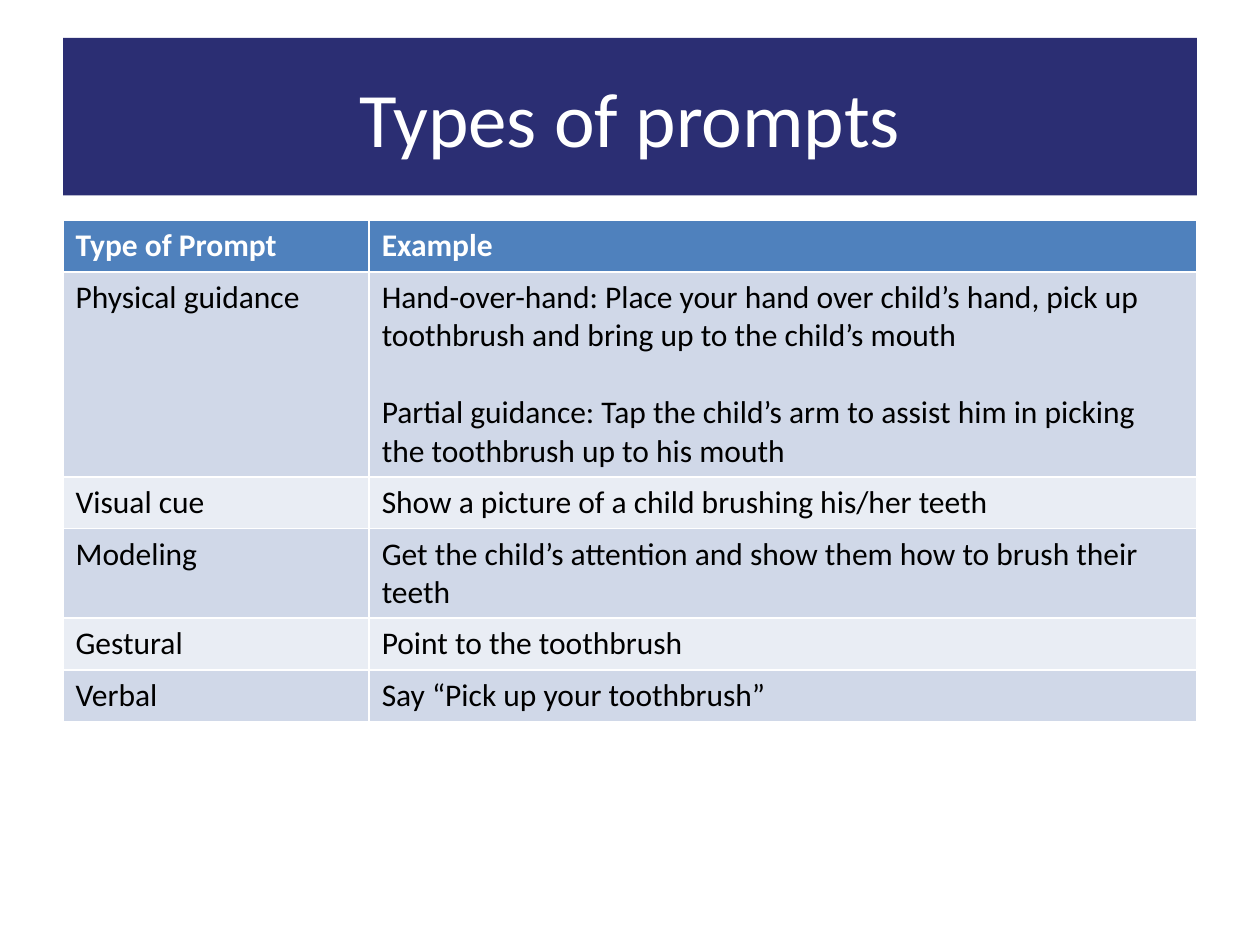
from pptx import Presentation
from pptx.dml.color import RGBColor
from pptx.enum.text import MSO_ANCHOR, PP_ALIGN
from pptx.util import Inches, Pt

CENTER = PP_ALIGN.CENTER
LEFT = PP_ALIGN.LEFT
MIDDLE = MSO_ANCHOR.MIDDLE

NAVY = RGBColor(0x2B, 0x2E, 0x73)
BLUE = RGBColor(0x4F, 0x81, 0xBD)
BAND_DARK = RGBColor(0xD0, 0xD8, 0xE8)
BAND_LIGHT = RGBColor(0xE9, 0xED, 0xF4)
WHITE = RGBColor(0xFF, 0xFF, 0xFF)
BLACK = RGBColor(0x00, 0x00, 0x00)

FONT = "Calibri"
SLIDE_WIDTH = Inches(10)
SLIDE_HEIGHT = Inches(7.5)
MARGIN = SLIDE_WIDTH * 0.05
CONTENT_WIDTH = SLIDE_WIDTH - 2 * MARGIN
ROW_HEIGHT = Inches(0.41)
TYPE_SHARE = 0.27
BLANK_LINE = 22

HEADINGS = ("Type of Prompt", "Example")
PROMPTS = (
    ("Physical guidance",
     "Hand-over-hand: Place your hand over child’s hand, pick up toothbrush "
     "and bring up to the child’s mouth\n"
     "Partial guidance: Tap the child’s arm to assist him in picking the "
     "toothbrush up to his mouth"),
    ("Visual cue", "Show a picture of a child brushing his/her teeth"),
    ("Modeling", "Get the child’s attention and show them how to brush their teeth"),
    ("Gestural", "Point to the toothbrush"),
    ("Verbal", "Say “Pick up your toothbrush”"),
)


def write_text(frame, text, size=18, color=BLACK, bold=False, align=LEFT, gap=0):
    """Fill a text frame with one formatted paragraph per line of text."""
    for index, line in enumerate(text.split("\n")):
        para = frame.add_paragraph() if index else frame.paragraphs[0]
        para.alignment = align
        if index:
            para.space_before = Pt(gap)
        span = para.add_run()
        span.text = line
        span.font.name = FONT
        span.font.size = Pt(size)
        span.font.bold = bold
        span.font.color.rgb = color


def fill_solid(target, color):
    """Give a shape or a cell a plain fill."""
    target.fill.solid()
    target.fill.fore_color.rgb = color


def place_title(page, text, left, top, width, height):
    """Turn the title placeholder into a filled banner."""
    title = page.shapes.title
    title.left, title.top = int(left), int(top)
    title.width, title.height = int(width), int(height)
    fill_solid(title, NAVY)
    title.text_frame.vertical_anchor = MIDDLE
    write_text(title.text_frame, text, size=44, color=WHITE, align=CENTER)


def place_table(page, headings, records, left, top, width):
    """Add a two-column table with a header row and banded records."""
    rows = (headings, *records)
    frame = page.shapes.add_table(len(rows), len(headings), int(left), int(top),
                                  int(width), ROW_HEIGHT * len(rows))
    table = frame.table
    table.columns[0].width = int(width * TYPE_SHARE)
    table.columns[1].width = int(width) - table.columns[0].width
    for row_index, texts in enumerate(rows):
        is_header = row_index == 0
        band = BAND_DARK if row_index % 2 else BAND_LIGHT
        for column_index, text in enumerate(texts):
            cell = table.cell(row_index, column_index)
            fill_solid(cell, BLUE if is_header else band)
            write_text(cell.text_frame, text, bold=is_header,
                       color=WHITE if is_header else BLACK, gap=BLANK_LINE)


def main():
    """Build the slide and save it."""
    deck = Presentation()
    deck.slide_width, deck.slide_height = SLIDE_WIDTH, SLIDE_HEIGHT
    page = deck.slides.add_slide(deck.slide_layouts[5])
    place_table(page, HEADINGS, PROMPTS, MARGIN, SLIDE_HEIGHT * 7 / 30, CONTENT_WIDTH)
    place_title(page, "Types of prompts", MARGIN, SLIDE_HEIGHT * 0.04,
                CONTENT_WIDTH, SLIDE_HEIGHT / 6)
    deck.save("out.pptx")


if __name__ == "__main__":
    main()
